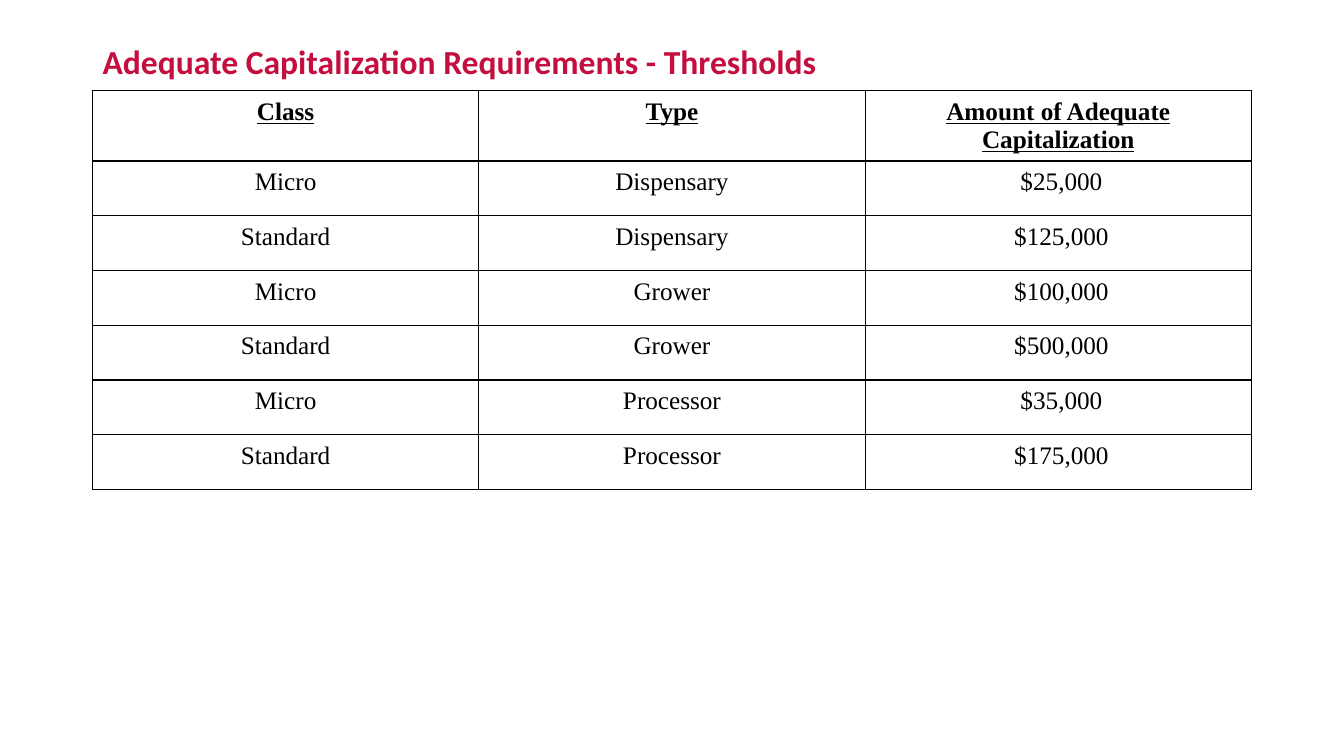
"""Build a slide with a table of capitalization thresholds."""
import pptx
import pptx.dml.color
import pptx.enum.text
import pptx.oxml
import pptx.oxml.ns
import pptx.util
from pptx.util import Cm

CRIMSON = pptx.dml.color.RGBColor(0xC4, 0x0E, 0x3E)
BLACK = pptx.dml.color.RGBColor(0, 0, 0)
WHITE = pptx.dml.color.RGBColor(0xFF, 0xFF, 0xFF)

LEFT, WIDTH = Cm(2.33), Cm(29.21)
ROW_HEIGHT = Cm(1.38)
CELL_MARGIN = Cm(0.18)

HEADINGS = ("Class", "Type", "Amount of Adequate Capitalization")
THRESHOLDS = (
    ("Micro", "Dispensary", " $25,000"),
    ("Standard", "Dispensary", " $125,000"),
    ("Micro", "Grower", " $100,000"),
    ("Standard", "Grower", " $500,000"),
    ("Micro", "Processor", " $35,000"),
    ("Standard", "Processor", " $175,000"),
)


def format_run(run, font_name, size, color, bold, underline=False):
    """Set the typeface, size, colour and emphasis of a run."""
    run.font.name = font_name
    run.font.size = pptx.util.Pt(size)
    run.font.color.rgb = color
    run.font.bold = bold
    run.font.underline = underline


def add_title(slide, wording):
    """Place and format the slide title."""
    title = slide.shapes.title
    title.left, title.top, title.width, title.height = LEFT, Cm(1.02), WIDTH, Cm(2.16)
    frame = title.text_frame
    frame.text = wording
    frame.word_wrap = True
    frame.auto_size = pptx.enum.text.MSO_AUTO_SIZE.NONE
    frame.vertical_anchor = pptx.enum.text.MSO_ANCHOR.TOP
    heading = frame.paragraphs[0]
    heading.alignment = pptx.enum.text.PP_ALIGN.LEFT
    heading.line_spacing = 0.9
    format_run(heading.runs[0], "Calibri", 24, CRIMSON, True)


def add_borders(cell):
    """Draw a thin black line on all four sides of a cell."""
    properties = cell._tc.get_or_add_tcPr()
    for side in ("lnL", "lnR", "lnT", "lnB"):
        properties.append(pptx.oxml.parse_xml(
            f'<a:{side} {pptx.oxml.ns.nsdecls("a")} w="{pptx.util.Pt(1)}">'
            f'<a:solidFill><a:srgbClr val="{BLACK}"/></a:solidFill></a:{side}>'
        ))


def fill_cell(cell, wording, is_heading):
    """Write and format one table cell."""
    cell.margin_left = cell.margin_right = CELL_MARGIN
    cell.margin_top = cell.margin_bottom = CELL_MARGIN
    add_borders(cell)
    cell.fill.solid()
    cell.fill.fore_color.rgb = WHITE
    cell.text_frame.text = wording
    entry = cell.text_frame.paragraphs[0]
    entry.alignment = pptx.enum.text.PP_ALIGN.CENTER
    format_run(entry.runs[0], "Times New Roman", 18, BLACK, is_heading, is_heading)


def add_threshold_table(slide):
    """Add the table of classes, types and amounts."""
    entries = (HEADINGS,) + THRESHOLDS
    thresholds = slide.shapes.add_table(
        len(entries), len(HEADINGS), LEFT, Cm(2.29), WIDTH, ROW_HEIGHT * len(entries)
    ).table
    thresholds.first_row = False
    thresholds.horz_banding = False
    for row_index, row in enumerate(entries):
        for column_index, wording in enumerate(row):
            fill_cell(thresholds.cell(row_index, column_index), wording, row_index == 0)


def main():
    """Create and save the presentation."""
    presentation = pptx.Presentation()
    presentation.slide_width, presentation.slide_height = Cm(33.87), Cm(19.05)
    slide = presentation.slides.add_slide(presentation.slide_layouts.get_by_name("Title Only"))
    add_title(slide, "Adequate Capitalization Requirements - Thresholds")
    add_threshold_table(slide)
    presentation.save("out.pptx")


if __name__ == "__main__":
    main()
